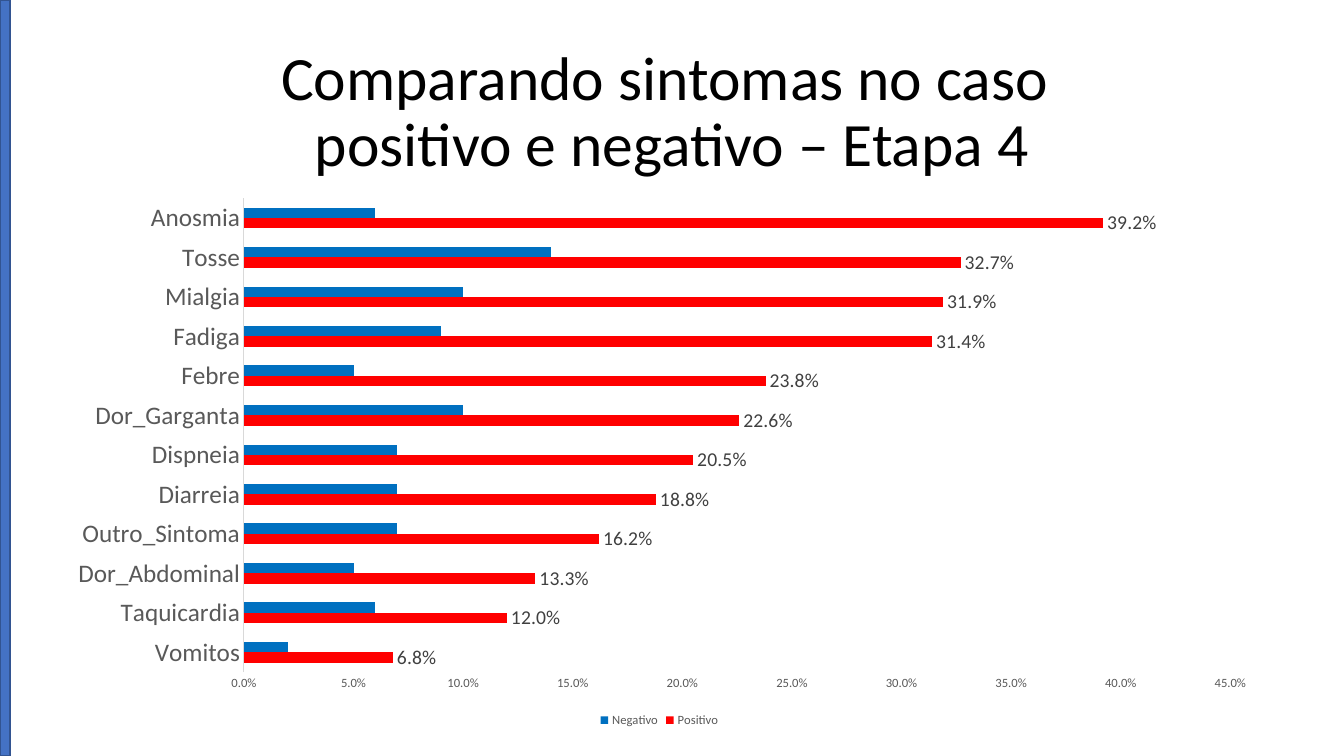
from typing import NamedTuple

from pptx import Presentation
from pptx.chart.chart import Chart
from pptx.chart.data import CategoryChartData
from pptx.dml.color import RGBColor
from pptx.enum.chart import XL_CHART_TYPE, XL_LABEL_POSITION, XL_LEGEND_POSITION, XL_TICK_MARK
from pptx.enum.shapes import MSO_SHAPE
from pptx.enum.text import MSO_ANCHOR, PP_ALIGN
from pptx.slide import Slide
from pptx.text.text import Font
from pptx.util import Emu, Inches, Pt

FONT = "Calibri"
PERCENT = "###0.0%"
COLUMNS, ROWS = 160, 90
WIDTH, HEIGHT = Inches(13.33), Inches(7.5)
COLORS = {
    "title": "000000",
    "axis_text": "595959",
    "axis_line": "D9D9D9",
    "label": "404040",
    "positive": "FF0000",
    "negative": "0070C0",
    "stripe": "4472C4",
    "stripe_edge": "325491",
}


class Area(NamedTuple):
    """A block of the slide grid, in columns and rows."""
    column: float
    row: float
    columns: float
    rows: float

    def box(self) -> tuple[Emu, Emu, Emu, Emu]:
        return (Emu(round(self.column * WIDTH / COLUMNS)), Emu(round(self.row * HEIGHT / ROWS)),
                Emu(round(self.columns * WIDTH / COLUMNS)), Emu(round(self.rows * HEIGHT / ROWS)))


class Symptom(NamedTuple):
    name: str
    positive: float
    negative: float


TITLE_AREA = Area(11, 4.8, 138, 17.4)
CHART_AREA = Area(5.75, 22.3, 145.5, 64.8)
STRIPE_AREA = Area(0, 0, 1.2, ROWS)
TITLE_LINES = "Comparando sintomas no caso \vpositivo e negativo – Etapa 4"

# Bottom to top, as the bars are stacked
SYMPTOMS = [
    Symptom(" Vomitos", 0.068, 0.02),
    Symptom(" Taquicardia", 0.12, 0.06),
    Symptom(" Dor_Abdominal", 0.133, 0.05),
    Symptom(" Outro_Sintoma", 0.162, 0.07),
    Symptom(" Diarreia", 0.188, 0.07),
    Symptom(" Dispneia", 0.205, 0.07),
    Symptom(" Dor_Garganta", 0.226, 0.1),
    Symptom(" Febre", 0.238, 0.05),
    Symptom(" Fadiga", 0.314, 0.09),
    Symptom(" Mialgia", 0.319, 0.1),
    Symptom(" Tosse", 0.327, 0.14),
    Symptom(" Anosmia", 0.392, 0.06),
]


def color(name: str) -> RGBColor:
    return RGBColor.from_string(COLORS[name])


def style_font(font: Font, size: float, color_name: str) -> None:
    font.name = FONT
    font.size = Pt(size)
    font.bold = False
    font.color.rgb = color(color_name)


def add_title(slide: Slide) -> None:
    frame = slide.shapes.add_textbox(*TITLE_AREA.box()).text_frame
    frame.word_wrap = True
    frame.vertical_anchor = MSO_ANCHOR.MIDDLE
    paragraph = frame.paragraphs[0]
    paragraph.text = TITLE_LINES
    paragraph.alignment = PP_ALIGN.CENTER
    paragraph.line_spacing = 0.9
    style_font(paragraph.font, 44, "title")


def style_axes(chart: Chart) -> None:
    for axis, size in ((chart.category_axis, 18), (chart.value_axis, 9)):
        axis.major_tick_mark = axis.minor_tick_mark = XL_TICK_MARK.NONE
        axis.has_major_gridlines = False
        style_font(axis.tick_labels.font, size, "axis_text")
    category_line = chart.category_axis.format.line
    category_line.color.rgb = color("axis_line")
    category_line.width = Pt(0.75)

    value_axis = chart.value_axis
    value_axis.format.line.fill.background()
    value_axis.minimum_scale, value_axis.maximum_scale = 0, 0.45
    value_axis.major_unit = 0.05
    value_axis.tick_labels.number_format = PERCENT
    value_axis.tick_labels.number_format_is_linked = False


def add_symptom_chart(slide: Slide) -> None:
    data = CategoryChartData(number_format=PERCENT)
    data.categories = [symptom.name for symptom in SYMPTOMS]
    data.add_series("Positivo", [symptom.positive for symptom in SYMPTOMS])
    data.add_series("Negativo", [symptom.negative for symptom in SYMPTOMS])
    chart = slide.shapes.add_chart(XL_CHART_TYPE.BAR_CLUSTERED, *CHART_AREA.box(), data).chart
    chart.has_title = False
    style_font(chart.font, 10, "title")
    style_axes(chart)

    # Bars
    plot = chart.plots[0]
    plot.gap_width = 182
    plot.overlap = 0
    plot.vary_by_categories = False
    for series, color_name in zip(plot.series, ("positive", "negative")):
        series.format.fill.solid()
        series.format.fill.fore_color.rgb = color(color_name)

    # Values on the positive cases only
    labels = plot.series[0].data_labels
    labels.show_value = True
    labels.position = XL_LABEL_POSITION.OUTSIDE_END
    labels.number_format = PERCENT
    labels.number_format_is_linked = False
    style_font(labels.font, 14, "label")

    # Legend
    chart.has_legend = True
    chart.legend.position = XL_LEGEND_POSITION.BOTTOM
    chart.legend.include_in_layout = False
    style_font(chart.legend.font, 9, "axis_text")


def add_stripe(slide: Slide) -> None:
    stripe = slide.shapes.add_shape(MSO_SHAPE.RECTANGLE, *STRIPE_AREA.box())
    stripe.shadow.inherit = False
    stripe.fill.solid()
    stripe.fill.fore_color.rgb = color("stripe")
    stripe.line.color.rgb = color("stripe_edge")
    stripe.line.width = Pt(1)


def main() -> None:
    presentation = Presentation()
    presentation.slide_width, presentation.slide_height = WIDTH, HEIGHT
    slide = presentation.slides.add_slide(presentation.slide_layouts[6])
    add_title(slide)
    add_symptom_chart(slide)
    add_stripe(slide)
    presentation.save("out.pptx")


if __name__ == "__main__":
    main()
